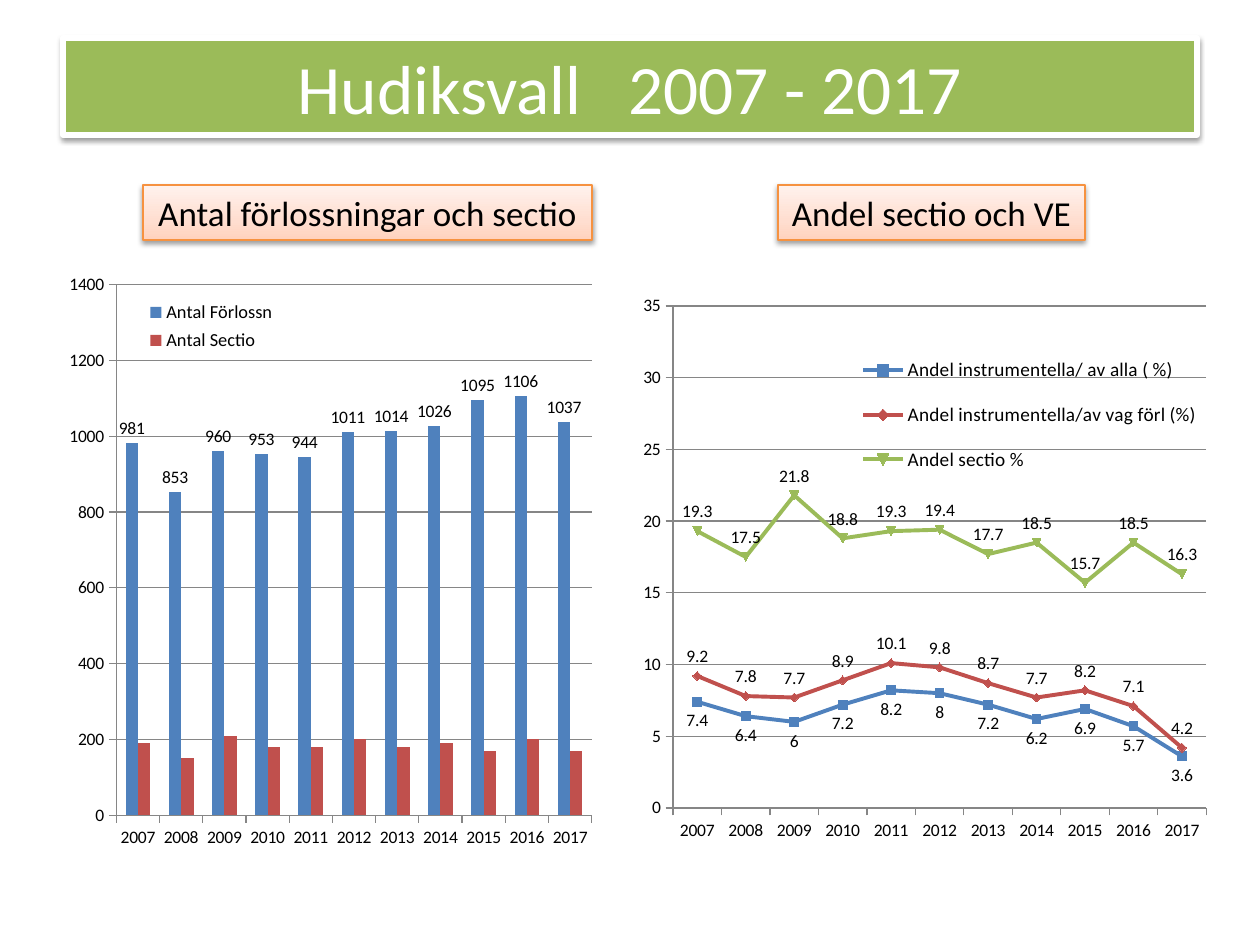
from lxml.etree import SubElement
from pptx import Presentation
from pptx.chart.data import CategoryChartData
from pptx.dml.color import RGBColor
from pptx.enum.chart import XL_CHART_TYPE, XL_LABEL_POSITION, XL_LEGEND_POSITION, XL_TICK_MARK
from pptx.enum.shapes import MSO_SHAPE
from pptx.enum.text import MSO_ANCHOR, MSO_AUTO_SIZE, PP_ALIGN
from pptx.oxml import parse_xml
from pptx.oxml.ns import nsdecls, qn
from pptx.util import Pt

PX = 914400 / 126


class Theme:
    font = "Calibri"
    white = RGBColor.from_string("FFFFFF")
    black = RGBColor.from_string("000000")
    blue = RGBColor.from_string("4F81BD")
    red = RGBColor.from_string("C0504D")
    green = RGBColor.from_string("9BBB59")
    orange = RGBColor.from_string("F69240")
    grid = RGBColor.from_string("868686")
    peach = [(0, "FFD2BD"), (35, "FFDED0"), (100, "FFF2ED")]
    title_size, label_size, chart_size = Pt(39.6), Pt(20), Pt(10)


def add_shadow(sp):
    sp._element.spPr.append(parse_xml(
        f'<a:effectLst {nsdecls("a")}><a:outerShdw blurRad="{Pt(3.1)}" dist="{Pt(1.6)}" dir="5400000" '
        'rotWithShape="0"><a:srgbClr val="000000"><a:alpha val="38000"/></a:srgbClr>'
        '</a:outerShdw></a:effectLst>'))


def set_layout(element, box, inner=False):
    """Place a plot area or legend by x, y, w, h as fractions of the chart."""
    for old in element.findall(qn("c:layout")):
        element.remove(old)
    layout = parse_xml(f'<c:layout {nsdecls("c")}/>')
    manual = SubElement(layout, qn("c:manualLayout"))
    if inner:
        SubElement(manual, qn("c:layoutTarget")).set("val", "inner")
    for tag in ("xMode", "yMode"):
        SubElement(manual, qn(f"c:{tag}")).set("val", "edge")
    for tag, value in zip("xywh", box):
        SubElement(manual, qn(f"c:{tag}")).set("val", str(value))
    element.insert(0 if inner else 1, layout)


prs = Presentation()
prs.slide_width, prs.slide_height = int(1260 * PX), int(945 * PX)
s = prs.slides.add_slide(prs.slide_layouts[5])

# Title banner
title = s.shapes.title
title.left, title.top, title.width, title.height = (int(v * PX) for v in (63, 38, 1134, 97))
title.fill.solid()
title.fill.fore_color.rgb = Theme.green
title.line.color.rgb = Theme.white
title.line.width = Pt(3)
add_shadow(title)
tf = title.text_frame
tf.vertical_anchor = MSO_ANCHOR.MIDDLE
tf.auto_size = MSO_AUTO_SIZE.NONE
p = tf.paragraphs[0]
p.alignment = PP_ALIGN.CENTER
r = p.add_run()
r.text = "Hudiksvall   2007 - 2017"
r.font.name, r.font.size = Theme.font, Theme.title_size
r.font.color.rgb = Theme.white

# Chart headings
for text, left, width in [("Antal förlossningar och sectio", 143, 449),
                          ("Andel sectio och VE", 778, 307)]:
    sp = s.shapes.add_shape(MSO_SHAPE.RECTANGLE, *(int(v * PX) for v in (left, 185, width, 55)))
    sp.fill.gradient()
    sp.fill.gradient_angle = 90
    stops = sp._element.spPr.find(qn("a:gradFill")).find(qn("a:gsLst"))
    for stop in list(stops):
        stops.remove(stop)
    for pos, color in Theme.peach:
        gs = SubElement(stops, qn("a:gs"), pos=str(pos * 1000))
        SubElement(gs, qn("a:srgbClr"), val=color)
    sp.fill.gradient_angle = 270
    sp._element.spPr.find(qn("a:gradFill")).find(qn("a:lin")).set("ang", "16200000")
    sp.line.color.rgb = Theme.orange
    sp.line.width = Pt(0.75)
    add_shadow(sp)
    tf = sp.text_frame
    tf.word_wrap = False
    tf.auto_size = MSO_AUTO_SIZE.SHAPE_TO_FIT_TEXT
    p = tf.paragraphs[0]
    p.alignment = PP_ALIGN.CENTER
    r = p.add_run()
    r.text = text
    r.font.name, r.font.size = Theme.font, Theme.label_size
    r.font.color.rgb = Theme.black

# Charts: each series is name, values, colour, label position
ABOVE, BELOW = XL_LABEL_POSITION.ABOVE, XL_LABEL_POSITION.BELOW
charts = [
    dict(kind=XL_CHART_TYPE.COLUMN_CLUSTERED, box=(53, 265, 587, 615), top=1400, step=200,
         plot=(0.108, 0.032, 0.81, 0.863), legend=(0.15, 0.05, 0.24, 0.1), legend_size=10.5,
         series=[
             ("Antal Förlossn", [981, 853, 960, 953, 944, 1011, 1014, 1026, 1095, 1106, 1037],
              Theme.blue, XL_LABEL_POSITION.OUTSIDE_END),
             ("Antal Sectio", [190, 150, 210, 180, 180, 200, 180, 190, 170, 200, 170],
              Theme.red, None)]),
    dict(kind=XL_CHART_TYPE.LINE_MARKERS, box=(630, 284, 615, 595), top=35, step=5,
         plot=(0.07, 0.037, 0.867, 0.844), legend=(0.37, 0.09, 0.56, 0.26), legend_size=11,
         series=[
             ("Andel instrumentella/ av alla ( %)",
              [7.4, 6.4, 6, 7.2, 8.2, 8, 7.2, 6.2, 6.9, 5.7, 3.6], Theme.blue, BELOW),
             ("Andel instrumentella/av vag förl (%)",
              [9.2, 7.8, 7.7, 8.9, 10.1, 9.8, 8.7, 7.7, 8.2, 7.1, 4.2], Theme.red, ABOVE),
             ("Andel sectio %",
              [19.3, 17.5, 21.8, 18.8, 19.3, 19.4, 17.7, 18.5, 15.7, 18.5, 16.3],
              Theme.green, ABOVE)]),
]
for c in charts:
    data = CategoryChartData()
    data.categories = [str(year) for year in range(2007, 2018)]
    for name, values, *_ in c["series"]:
        data.add_series(name, values)
    chart = s.shapes.add_chart(c["kind"], *(int(v * PX) for v in c["box"]), data).chart
    chart.has_title = False
    chart.font.name, chart.font.size = Theme.font, Theme.chart_size
    chart.font.color.rgb = Theme.black

    values_axis = chart.value_axis
    values_axis.minimum_scale, values_axis.maximum_scale = 0, c["top"]
    values_axis.major_unit = c["step"]
    values_axis.has_major_gridlines = True
    for axis in (chart.category_axis, values_axis):
        axis.major_tick_mark = XL_TICK_MARK.OUTSIDE
    for line in (values_axis.major_gridlines.format.line, values_axis.format.line,
                 chart.category_axis.format.line):
        line.color.rgb = Theme.grid
        line.width = Pt(0.75)

    chart.has_legend = True
    legend = chart.legend
    legend.position = XL_LEGEND_POSITION.RIGHT
    legend.include_in_layout = True
    legend.font.name, legend.font.size = Theme.font, Pt(c["legend_size"])
    legend.font.color.rgb = Theme.black
    set_layout(legend._element, c["legend"])
    plot = chart.plots[0]
    plot.vary_by_categories = False
    set_layout(chart._chartSpace.chart.plotArea, c["plot"], inner=True)

    is_column = c["kind"] == XL_CHART_TYPE.COLUMN_CLUSTERED
    if is_column:
        plot.gap_width, plot.overlap = 75, 0
        plot.gap_width = 150
    for ser, (_, _, color, label_pos) in zip(plot.series, c["series"]):
        if is_column:
            ser.format.fill.solid()
            ser.format.fill.fore_color.rgb = color
        else:
            ser.smooth = False
            ser.format.line.color.rgb = color
            ser.format.line.width = Pt(2.25)
            ser.marker.format.fill.solid()
            ser.marker.format.fill.fore_color.rgb = color
            ser.marker.format.line.color.rgb = color
        if label_pos is not None:
            ser.data_labels.show_value = True
            ser.data_labels.position = label_pos

prs.save("out.pptx")
